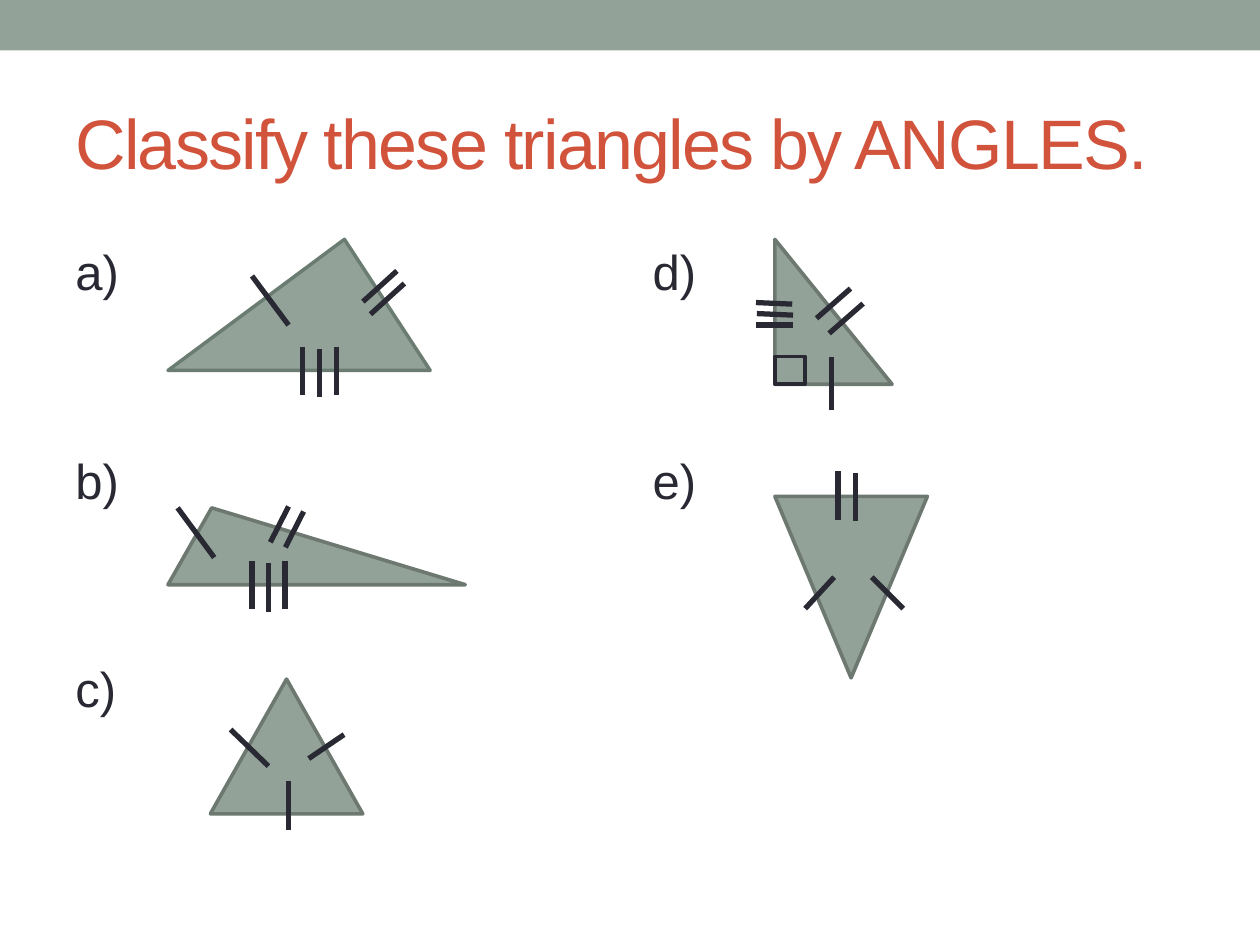
from lxml import etree
from pptx import Presentation
from pptx.dml.color import RGBColor
from pptx.enum import shapes, text
from pptx.oxml import ns
from pptx.util import Pt

SAGE = RGBColor(0x93, 0xA2, 0x99)
EDGE = RGBColor(0x6D, 0x78, 0x71)
MOSS = RGBColor(0x6B, 0x7D, 0x72)
INK = RGBColor(0x29, 0x29, 0x34)
RED = RGBColor(0xD2, 0x53, 0x3C)
KIND = shapes.MSO_SHAPE


def add_text(slide, lines, box, size, color, gap=0, top=3.6, track=0,
             anchor=text.MSO_ANCHOR.TOP):
    """Add one paragraph per line, with gap points between paragraphs."""
    frame = slide.shapes.add_textbox(*map(Pt, box)).text_frame
    frame.word_wrap = True
    frame.vertical_anchor = anchor
    frame.margin_top = Pt(top)
    for i, line in enumerate(lines):
        para = frame.add_paragraph() if i else frame.paragraphs[0]
        para.space_before = Pt(gap if i else 0)
        run = para.add_run()
        run.text = line
        run.font.name = "Arial"
        run.font.size = Pt(size)
        run.font.color.rgb = color
        if track:
            run._r.get_or_add_rPr().set("spc", str(track * 100))


def add_shape(slide, kind, box, line=EDGE, width=2.08, apex=None):
    shape = slide.shapes.add_shape(kind, *map(Pt, box))
    shape.shadow.inherit = False
    shape.fill.solid()
    shape.fill.fore_color.rgb = SAGE
    if line is None:
        shape.line.fill.background()
    else:
        shape.line.color.rgb = line
        shape.line.width = Pt(width)
    if apex is not None:
        shape.adjustments[0] = apex


def add_ticks(slide, dx, dy, *starts):
    """Draw parallel side marks, each running (dx, dy) from its start."""
    for x, y in starts:
        tick = slide.shapes.add_connector(
            shapes.MSO_CONNECTOR.STRAIGHT, Pt(x), Pt(y), Pt(x + dx), Pt(y + dy))
        tick.line.color.rgb = INK
        tick.line.width = Pt(3)
        etree.SubElement(tick._element.spPr, ns.qn("a:effectLst"))


def draw_a(slide):
    add_shape(slide, KIND.ISOSCELES_TRIANGLE, (96, 136.8, 149.8, 74.9),
              line=MOSS, width=2, apex=0.673)
    add_ticks(slide, 20.9, 28.1, (144, 157.7))
    add_ticks(slide, -19.4, 17.6, (226.8, 154.8), (231.1, 162))
    add_ticks(slide, 0, 27.7, (172.8, 198), (182.6, 199.4), (192.2, 198))


def draw_b(slide):
    add_shape(slide, KIND.ISOSCELES_TRIANGLE, (96, 290.2, 169.9, 43.9), apex=0.147)
    add_ticks(slide, 20.9, 28.4, (101.5, 290.2))
    add_ticks(slide, -10.4, 20.5, (164.9, 289.4), (173.5, 292.3))
    add_ticks(slide, 0, 27.7, (144, 320.4), (153.4, 321.8), (162.9, 320.4))


def draw_c(slide):
    add_shape(slide, KIND.ISOSCELES_TRIANGLE, (120.2, 388.1, 87.1, 77))
    add_ticks(slide, 21.6, 20.9, (131.8, 416.9))
    add_ticks(slide, -20.2, 13.7, (196.6, 419.8))
    add_ticks(slide, 0, 27.7, (164.9, 446.4))


def draw_d(slide):
    add_shape(slide, KIND.RIGHT_TRIANGLE, (442.8, 136.8, 67, 82.8))
    add_shape(slide, KIND.RECTANGLE, (442.8, 203.8, 17.3, 15.8), line=INK)
    add_ticks(slide, 20.9, 0, (432, 185.8))
    add_ticks(slide, 20.7, 0.9, (432.5, 179.2), (432, 172.9))
    add_ticks(slide, -19.4, 17, (486, 164.9), (493.2, 173.5))
    add_ticks(slide, 0, 30.2, (475.2, 203.8))


def draw_e(slide):
    add_shape(slide, KIND.FLOWCHART_MERGE, (442.8, 283.7, 87.1, 103.7))
    add_ticks(slide, 0, 28, (478.8, 269.3), (488.9, 270))
    add_ticks(slide, 16.6, -18, (460.1, 347.8))
    add_ticks(slide, 18, 18, (498.2, 329.8))


def main():
    deck = Presentation()
    deck.slide_width, deck.slide_height = Pt(720), Pt(540)
    slide = deck.slides.add_slide(deck.slide_layouts[6])
    add_shape(slide, KIND.RECTANGLE, (0, 0, 720, 28.8), line=None)
    add_text(slide, ["Classify these triangles by ANGLES."],
             (36, 41.8, 648, 77.8), 40, RED, track=-1,
             anchor=text.MSO_ANCHOR.MIDDLE)
    for left, labels in ((36, ("a)", "b)", "c)")), (365.8, ("d)", "e)"))):
        add_text(slide, labels, (left, 131.8, 318.2, 371.5), 28, INK,
                 gap=85.5, top=6.3)
    for draw in (draw_a, draw_b, draw_c, draw_d, draw_e):
        draw(slide)
    deck.save("out.pptx")


if __name__ == "__main__":
    main()
